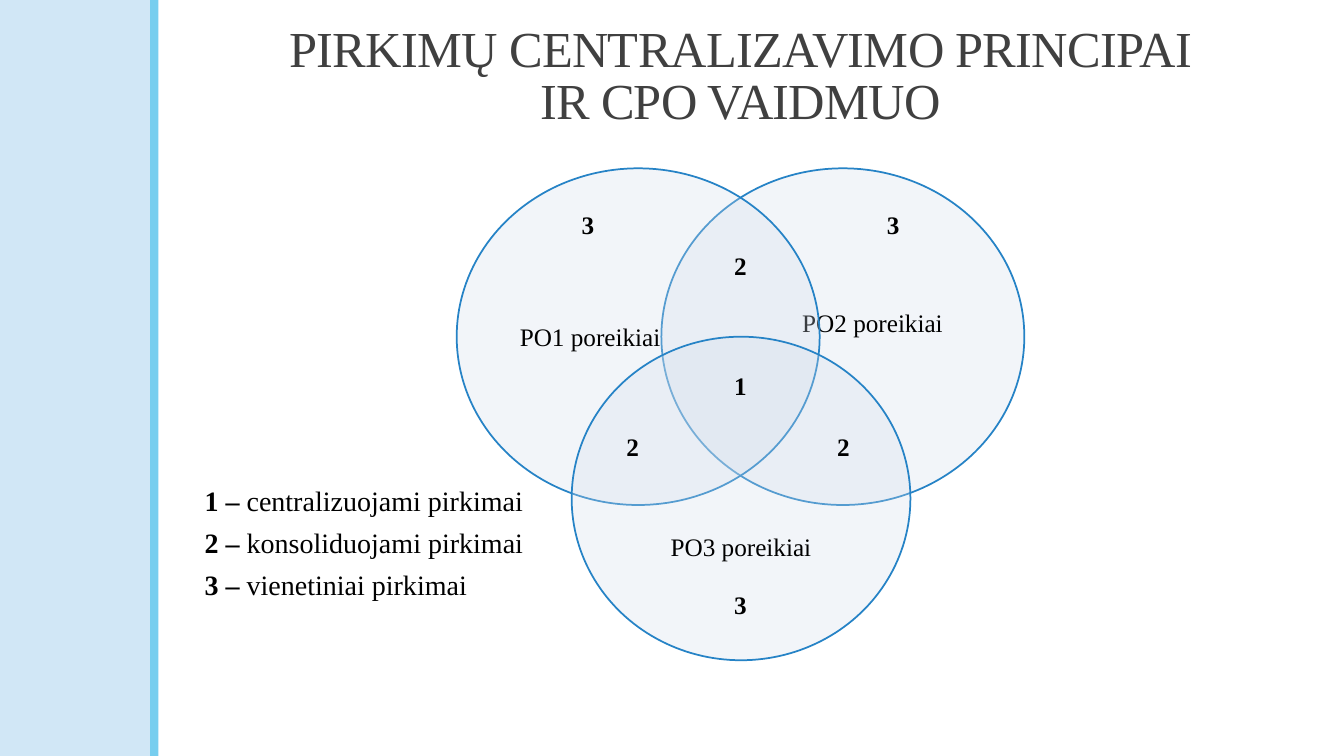
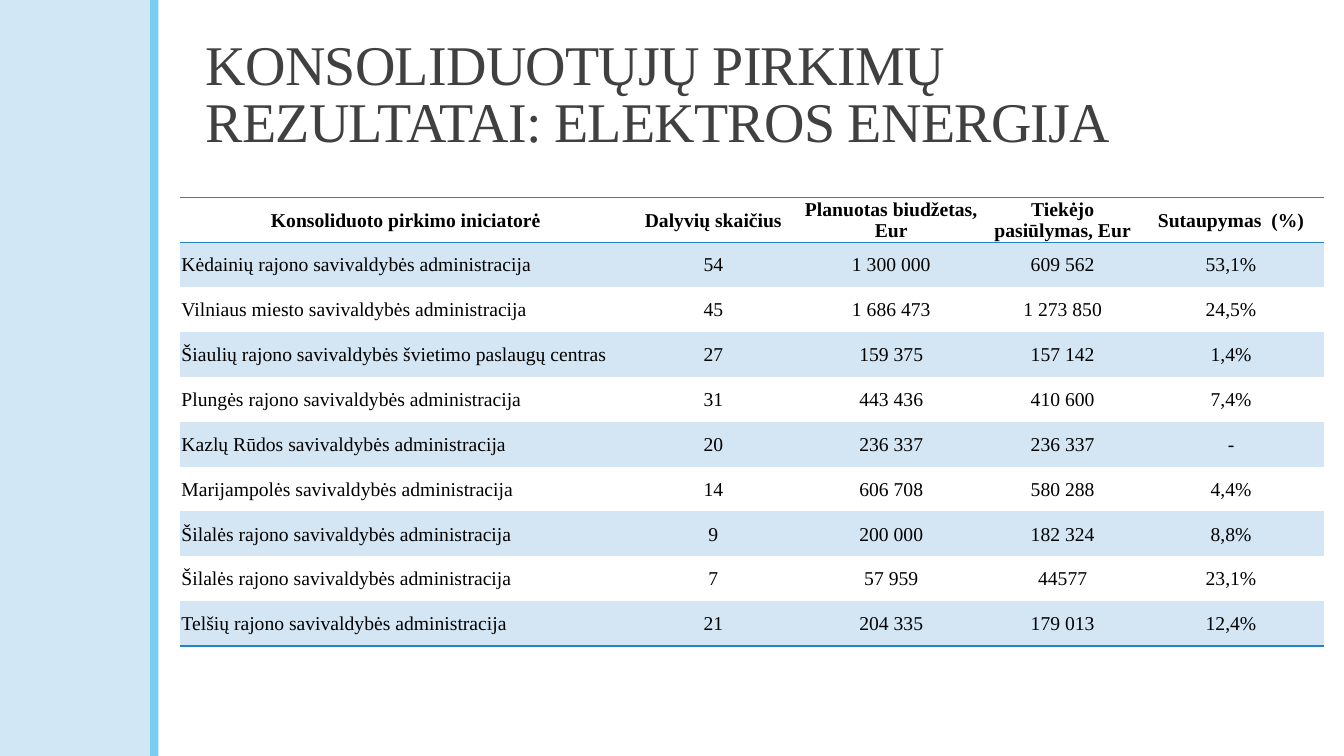
from lxml import etree
from pptx import Presentation
from pptx.dml.color import RGBColor
from pptx.enum.shapes import MSO_SHAPE
from pptx.enum.text import MSO_ANCHOR, MSO_AUTO_SIZE, PP_ALIGN
from pptx.oxml.ns import qn
from pptx.util import Inches, Pt

FONT = "Times New Roman"
BLACK = RGBColor(0x00, 0x00, 0x00)
TITLE_GREY = RGBColor(0x40, 0x40, 0x40)
BAND_PALE = RGBColor(0xD1, 0xE7, 0xF6)
BAND_BRIGHT = RGBColor(0x77, 0xCE, 0xEF)
CIRCLE_FILL = RGBColor(0xD2, 0xDD, 0xEC)
ACCENT = RGBColor(0x26, 0x83, 0xC6)
ROW_TINT = RGBColor(0xD4, 0xE6, 0xF4)
NO_GRID_STYLE = "{2D5ABB26-0587-4C30-8999-92F81FD0307C}"


def add_run(paragraph, content, size, bold=False, color=BLACK):
    run = paragraph.add_run()
    run.text = content
    run.font.name = FONT
    run.font.size = Pt(size)
    run.font.bold = bold
    run.font.color.rgb = color
    return run


def set_title(slide, lines, size, align, left, top, width):
    title = slide.shapes.title
    title.left, title.top = Inches(left), Inches(top)
    title.width, title.height = Inches(width), Inches(1.45)
    frame = title.text_frame
    frame.word_wrap = True
    frame.auto_size = MSO_AUTO_SIZE.NONE
    frame.vertical_anchor = MSO_ANCHOR.MIDDLE
    paragraph = frame.paragraphs[0]
    paragraph.alignment = align
    paragraph.line_spacing = 0.85
    for i, line in enumerate(lines):
        if i:
            paragraph.add_line_break()
        run = add_run(paragraph, line, size, color=TITLE_GREY)
        run.font._element.set("spc", "-50")


prs = Presentation()
prs.slide_width, prs.slide_height = Inches(13.33), Inches(7.5)
layout = prs.slide_layouts[5]
venn = prs.slides.add_slide(layout)
results = prs.slides.add_slide(layout)

# Side bands, moved into the layout so that both slides share them
bands = [(0, 1.49, BAND_PALE), (1.49, 0.08, BAND_BRIGHT)]
for i, (left, width, color) in enumerate(bands):
    band = venn.shapes.add_shape(
        MSO_SHAPE.RECTANGLE, Inches(left), 0, Inches(width), prs.slide_height)
    band.shadow.inherit = False
    band.fill.solid()
    band.fill.fore_color.rgb = color
    band.line.fill.background()
    band.element.nvSpPr.cNvPr.set("id", str(101 + i))
    layout.element.cSld.spTree.insert(2 + i, band.element)

# Slide 1: overlapping needs
set_title(venn, ["PIRKIMŲ CENTRALIZAVIMO PRINCIPAI", "IR CPO VAIDMUO"],
          36, PP_ALIGN.CENTER, 1.86, 0.05, 10.97)

# label, left, top, width, height, alignment, margins: top, right, bottom
circles = [
    ("PO2 poreikiai", 6.56, 1.67, 3.6, 3.34, PP_ALIGN.RIGHT, 0.05, 0.28, 0.33),
    ("PO1 poreikiai", 4.53, 1.67, 3.6, 3.34, PP_ALIGN.LEFT, 0.05, 0.1, 0.05),
    ("PO3 poreikiai", 5.67, 3.34, 3.36, 3.21, PP_ALIGN.CENTER, 1, 0.1, 0.05),
]
for label, left, top, width, height, align, above, right, below in circles:
    circle = venn.shapes.add_shape(
        MSO_SHAPE.OVAL, Inches(left), Inches(top), Inches(width), Inches(height))
    circle.shadow.inherit = False
    circle.fill.solid()
    circle.fill.fore_color.rgb = CIRCLE_FILL
    tint = circle.element.spPr.find(qn("a:solidFill"))[0]
    etree.SubElement(tint, qn("a:alpha"), val="28000")
    circle.line.color.rgb = ACCENT
    circle.line.width = Pt(1.25)
    frame = circle.text_frame
    frame.word_wrap = True
    frame.vertical_anchor = MSO_ANCHOR.MIDDLE
    frame.margin_top, frame.margin_bottom = Inches(above), Inches(below)
    frame.margin_right = Inches(right)
    frame.paragraphs[0].alignment = align
    add_run(frame.paragraphs[0], label, 18)

zones = [
    ("3", 5.67, 2.03, PP_ALIGN.LEFT),
    ("3", 8.19, 2.03, PP_ALIGN.RIGHT),
    ("3", 6.93, 5.8, PP_ALIGN.CENTER),
    ("1", 6.93, 3.62, PP_ALIGN.CENTER),
    ("2", 7.95, 4.23, PP_ALIGN.CENTER),
    ("2", 5.86, 4.23, PP_ALIGN.CENTER),
    ("2", 6.93, 2.43, PP_ALIGN.CENTER),
]
for number, left, top, align in zones:
    zone = venn.shapes.add_textbox(
        Inches(left), Inches(top), Inches(0.83), Inches(0.4))
    zone.text_frame.word_wrap = True
    paragraph = zone.text_frame.paragraphs[0]
    paragraph.alignment = align
    add_run(paragraph, number, 18, bold=True)

legend = venn.shapes.add_textbox(
    Inches(1.93), Inches(4.75), Inches(3.48), Inches(1.24)).text_frame
legend.word_wrap = True
meanings = ["centralizuojami pirkimai", "konsoliduojami pirkimai",
            "vienetiniai pirkimai"]
for number, meaning in enumerate(meanings, 1):
    if number == 1:
        paragraph = legend.paragraphs[0]
    else:
        paragraph = legend.add_paragraph()
        paragraph.space_before = Pt(6)
    add_run(paragraph, f"{number} – ", 20, bold=True)
    add_run(paragraph, meaning, 20)

# Slide 2: results table
set_title(results, ["KONSOLIDUOTŲJŲ PIRKIMŲ REZULTATAI: ELEKTROS ENERGIJA"],
          40, PP_ALIGN.LEFT, 1.94, 0.24, 10.41)

rows = [
    ("Konsoliduoto pirkimo iniciatorė", "Dalyvių skaičius",
     "Planuotas biudžetas, Eur", "Tiekėjo pasiūlymas, Eur", "Sutaupymas  (%)"),
    ("Kėdainių rajono savivaldybės administracija",
     "54", "1 300 000", "609 562", "53,1%"),
    ("Vilniaus miesto savivaldybės administracija",
     "45", "1 686 473", "1 273 850", "24,5%"),
    ("Šiaulių rajono savivaldybės švietimo paslaugų centras",
     "27", "159 375", "157 142", "1,4%"),
    ("Plungės rajono savivaldybės administracija",
     "31", "443 436", "410 600", "7,4%"),
    ("Kazlų Rūdos savivaldybės administracija",
     "20", "236 337", "236 337", "-"),
    ("Marijampolės savivaldybės administracija",
     "14", "606 708", "580 288", "4,4%"),
    ("Šilalės rajono savivaldybės administracija",
     "9", "200 000", "182 324", "8,8%"),
    ("Šilalės rajono savivaldybės administracija",
     "7", "57 959", "44577", "23,1%"),
    ("Telšių rajono savivaldybės administracija",
     "21", "204 335", "179 013", "12,4%"),
]
column_widths = [4.47, 1.63, 1.9, 1.5, 1.84]
table_frame = results.shapes.add_table(
    len(rows), len(column_widths), Inches(1.79), Inches(1.96),
    Inches(sum(column_widths)), Inches(4.45))
next(table_frame.element.iter(qn("a:tableStyleId"))).text = NO_GRID_STYLE
table = table_frame.table
for column, width in zip(table.columns, column_widths):
    column.width = Inches(width)

last = len(rows) - 1
for r, row in enumerate(rows):
    edges = {0: ["a:lnT", "a:lnB"], last: ["a:lnB"]}.get(r, [])
    for c, value in enumerate(row):
        cell = table.cell(r, c)
        cell.vertical_anchor = MSO_ANCHOR.MIDDLE
        cell.margin_left = cell.margin_right = cell.margin_top = Inches(0.01)
        cell.margin_bottom = 0
        for edge in edges:
            border = etree.SubElement(
                cell._tc.get_or_add_tcPr(), qn(edge), w=str(Pt(1)))
            solid = etree.SubElement(border, qn("a:solidFill"))
            etree.SubElement(solid, qn("a:srgbClr"), val=str(ACCENT))
        if r % 2:
            cell.fill.solid()
            cell.fill.fore_color.rgb = ROW_TINT
        else:
            cell.fill.background()
        paragraph = cell.text_frame.paragraphs[0]
        is_name = r > 0 and c == 0
        paragraph.alignment = PP_ALIGN.LEFT if is_name else PP_ALIGN.CENTER
        add_run(paragraph, value, 14, bold=r == 0)

prs.save("out.pptx")
